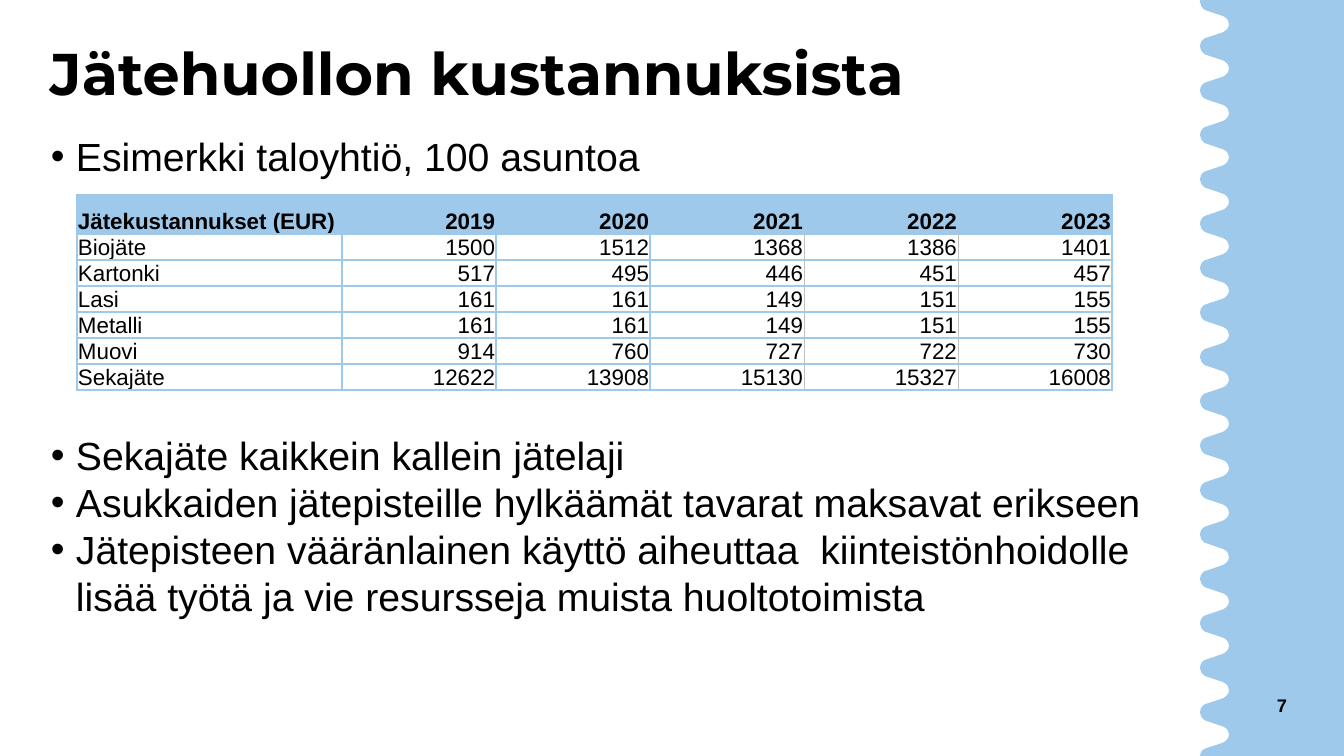
from dataclasses import dataclass

from lxml.etree import SubElement
from pptx import Presentation
from pptx.dml.color import RGBColor
from pptx.enum.text import MSO_ANCHOR, PP_ALIGN
from pptx.oxml.ns import qn
from pptx.util import Pt

TITLE = "Jätehuollon kustannuksista"
EXAMPLE = ["Esimerkki taloyhtiö, 100 asuntoa"]
FINDINGS = [
    "Sekajäte kaikkein kallein jätelaji",
    "Asukkaiden jätepisteille hylkäämät tavarat maksavat erikseen",
    "Jätepisteen vääränlainen käyttö aiheuttaa  kiinteistönhoidolle "
    "lisää työtä ja vie resursseja muista huoltotoimista",
]
PAGE_NUMBER = "7"
COSTS = [
    ("Jätekustannukset (EUR)", 2019, 2020, 2021, 2022, 2023),
    ("Biojäte", 1500, 1512, 1368, 1386, 1401),
    ("Kartonki", 517, 495, 446, 451, 457),
    ("Lasi", 161, 161, 149, 151, 155),
    ("Metalli", 161, 161, 149, 151, 155),
    ("Muovi", 914, 760, 727, 722, 730),
    ("Sekajäte", 12622, 13908, 15130, 15327, 16008),
]


@dataclass(frozen=True)
class Theme:
    blue: str = "9FC9EB"
    grey: str = "C0C0C0"
    black: str = "000000"
    heading_font: str = "Montserrat"
    body_font: str = "Arial"
    title_size: int = 42
    body_size: int = 28
    table_size: int = 16
    number_size: int = 13


THEME = Theme()
WIDTH, HEIGHT = 1344, 756
TITLE_LEFT, BODY_LEFT, TEXT_WIDTH, INDENT = 50, 51, 1100, 25
TABLE_LEFT, TABLE_TOP = 77, 195
LABEL_WIDTH, YEAR_WIDTH = 265, 154
HEADER_HEIGHT, ROW_HEIGHT = 39, 26
THIN_COLUMNS = (3, 4)
WAVE_LEFT, WAVE_TOP, TOOTH_COUNT, TOOTH_HEIGHT = 1200, 2, 17, 44.4
TOOTH_SEGMENTS = [
    ((0, 3), (2, 6), (5, 8)),
    ((23, 14),),
    ((23, 14), (29, 16), (29, 22)),
    ((29, 25), (27, 28), (23, 30)),
    ((5, 36),),
    ((5, 36), (0, 38), (0, 44)),
]


def px(value):
    return round(value * 914400 / 100.8)


def write(frame, lines, size, font=THEME.body_font, bold=False, align=PP_ALIGN.LEFT,
          anchor=MSO_ANCHOR.TOP, insets=(0, 0, 0, 0), spacing=None, bullet=False):
    frame.word_wrap = True
    frame.vertical_anchor = anchor
    frame.margin_left, frame.margin_top, frame.margin_right, frame.margin_bottom = map(px, insets)
    for index, line in enumerate(lines):
        para = frame.add_paragraph() if index else frame.paragraphs[0]
        para.alignment = align
        if spacing:
            para.line_spacing = spacing
        if bullet:
            properties = para._p.get_or_add_pPr()
            properties.set("marL", str(px(INDENT)))
            properties.set("indent", str(-px(INDENT)))
            SubElement(properties, qn("a:buFont"), typeface=font)
            SubElement(properties, qn("a:buChar"), char="•")
        span = para.add_run()
        span.text = str(line)
        span.font.name = font
        span.font.size = Pt(size)
        span.font.bold = bold
        span.font.color.rgb = RGBColor.from_string(THEME.black)


def add_text(page, left, top, width, height, lines, size, **style):
    box = page.shapes.add_textbox(px(left), px(top), px(width), px(height))
    write(box.text_frame, lines, size, **style)


def bend_segments(wave, segments):
    lines = list(wave._element.iter(qn("a:lnTo")))
    start = 0
    for segment in segments:
        first, *others = lines[start:start + len(segment)]
        start += len(segment)
        if others:
            first.tag = qn("a:cubicBezTo")
            for other in others:
                first.append(other[0])
                other.getparent().remove(other)


def add_wave(page):
    segments = [((WAVE_LEFT, WAVE_TOP),)]
    for tooth in range(TOOTH_COUNT):
        for segment in TOOTH_SEGMENTS:
            segments.append([
                (WAVE_LEFT + x, min(WAVE_TOP + (tooth + y / 44) * TOOTH_HEIGHT, HEIGHT))
                for x, y in segment])
    segments += [((WIDTH, HEIGHT),), ((WIDTH, 0),)]
    builder = page.shapes.build_freeform(px(WAVE_LEFT), 0)
    builder.add_line_segments(
        [(px(x), px(y)) for segment in segments for x, y in segment], close=True)
    wave = builder.convert_to_shape()
    bend_segments(wave, segments)
    wave.shadow.inherit = False
    wave.fill.solid()
    wave.fill.fore_color.rgb = RGBColor.from_string(THEME.blue)
    wave.line.fill.background()


def add_borders(cell, thin_sides):
    properties = cell._tc.get_or_add_tcPr()
    for side in ("lnL", "lnR", "lnT", "lnB"):
        thin = side in thin_sides
        border = SubElement(properties, qn(f"a:{side}"), w=str(Pt(0.5 if thin else 1.5)))
        fill = SubElement(border, qn("a:solidFill"))
        SubElement(fill, qn("a:srgbClr"), val=THEME.grey if thin else THEME.blue)


def add_costs(page):
    widths = [LABEL_WIDTH] + [YEAR_WIDTH] * (len(COSTS[0]) - 1)
    heights = [HEADER_HEIGHT] + [ROW_HEIGHT] * (len(COSTS) - 1)
    table = page.shapes.add_table(len(heights), len(widths), px(TABLE_LEFT), px(TABLE_TOP),
                                  px(sum(widths)), px(sum(heights))).table
    table.first_row = table.horz_banding = False
    for column, width in zip(table.columns, widths):
        column.width = px(width)
    for row, height in zip(table.rows, heights):
        row.height = px(height)
    for row, values in enumerate(COSTS):
        for column, value in enumerate(values):
            cell = table.cell(row, column)
            header = row == 0
            write(cell.text_frame, [value], THEME.table_size, bold=header, spacing=0.92,
                  align=PP_ALIGN.RIGHT if column else PP_ALIGN.LEFT)
            cell.vertical_anchor = MSO_ANCHOR.BOTTOM
            cell.margin_left = cell.margin_top = cell.margin_right = px(1)
            cell.margin_bottom = 0
            sides = (("lnR", column), ("lnL", column - 1))
            add_borders(cell, [side for side, line in sides if row and line in THIN_COLUMNS])
            if header:
                cell.fill.solid()
                cell.fill.fore_color.rgb = RGBColor.from_string(THEME.blue)
            else:
                cell.fill.background()


def main():
    deck = Presentation()
    deck.slide_width, deck.slide_height = px(WIDTH), px(HEIGHT)
    page = deck.slides.add_slide(deck.slide_layouts[6])
    add_wave(page)
    add_text(page, TITLE_LEFT, 45, TEXT_WIDTH, 87, [TITLE], THEME.title_size,
             font=THEME.heading_font, bold=True, spacing=0.9)
    for top, height, lines in ((132, 50, EXAMPLE), (431, 250, FINDINGS)):
        add_text(page, BODY_LEFT, top, TEXT_WIDTH, height, lines, THEME.body_size, bullet=True)
    add_text(page, 1151, 691, 136, 28, [PAGE_NUMBER], THEME.number_size, bold=True,
             align=PP_ALIGN.RIGHT, anchor=MSO_ANCHOR.MIDDLE)
    add_costs(page)
    deck.save("out.pptx")


if __name__ == "__main__":
    main()
